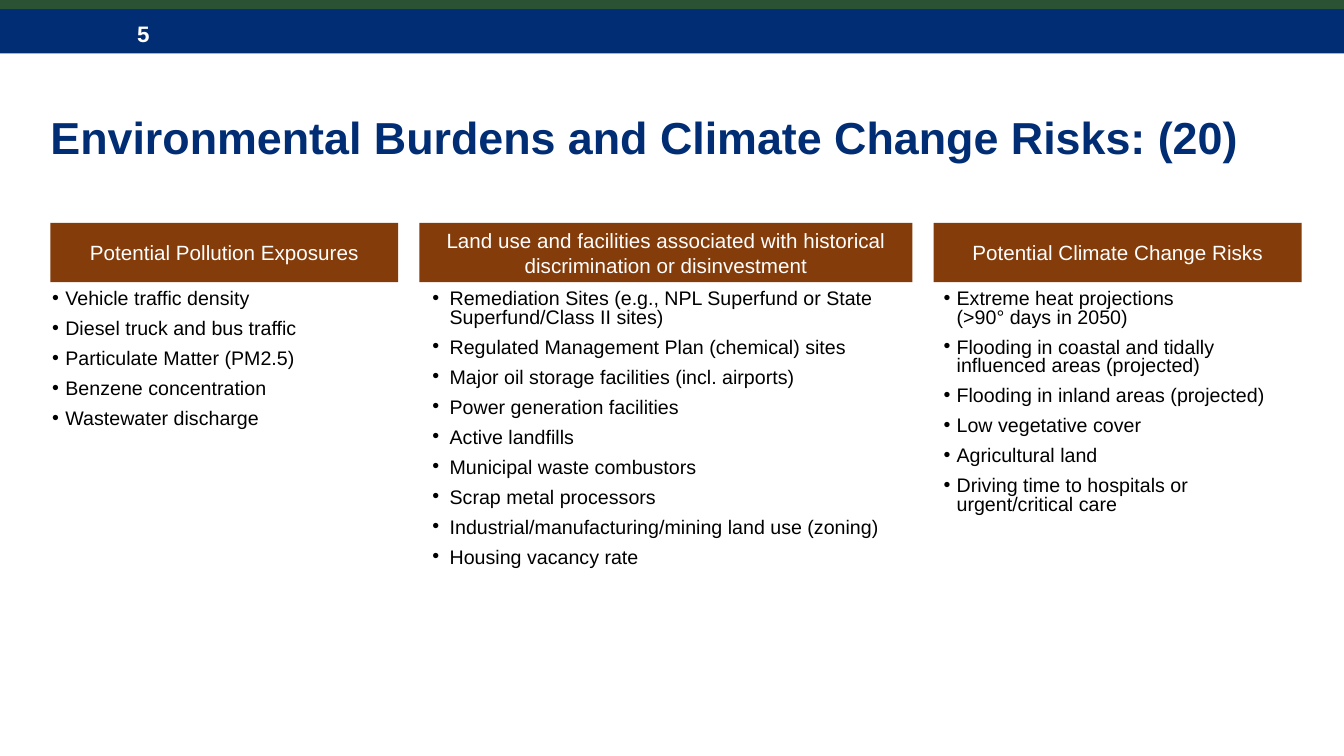
from pptx import Presentation
from pptx.dml.color import RGBColor
from pptx.enum.shapes import MSO_SHAPE as Shape
from pptx.enum.text import MSO_ANCHOR as Anchor, MSO_AUTO_SIZE as Fit, PP_ALIGN as Align
from pptx.oxml.ns import qn
from pptx.oxml.xmlchemy import OxmlElement as Node
from pptx.util import Pt

PX = 9144  # 100 px to the inch
NAVY = RGBColor(0x00, 0x2D, 0x73)
GREEN = RGBColor(0x2C, 0x52, 0x34)
BROWN = RGBColor(0x84, 0x3C, 0x0B)
WHITE = RGBColor(0xFF, 0xFF, 0xFF)
BLACK = RGBColor(0x00, 0x00, 0x00)

WIDE, HIGH = 1333, 750
HEAD = 59  # height of a column heading

# Heading box x and width; list box offset, size; insets; hanging indent
COLUMNS = [
    dict(head="Potential Pollution Exposures", x=50, w=345,
         list=(-8, 62, 363, 239), pad=(10, 5), hang=13,
         items=["Vehicle traffic density",
                "Diesel truck and bus traffic",
                "Particulate Matter (PM2.5)",
                "Benzene concentration",
                "Wastewater discharge"]),
    dict(head="Land use and facilities associated with historical "
              "discrimination or disinvestment", x=416, w=489,
         list=(0, 60, 490, 292), pad=(13, 7), hang=17,
         items=["Remediation Sites (e.g., NPL Superfund or State "
                "Superfund/Class II sites)",
                "Regulated Management Plan (chemical) sites",
                "Major oil storage facilities (incl. airports)",
                "Power generation facilities",
                "Active landfills",
                "Municipal waste combustors",
                "Scrap metal processors",
                "Industrial/manufacturing/mining land use (zoning)",
                "Housing vacancy rate"]),
    dict(head="Potential Climate Change Risks", x=926, w=365,
         list=(0, 62, 365, 356), pad=(10, 5), hang=13,
         items=["Extreme heat projections\v(>90° days in 2050)",
                "Flooding in coastal and tidally influenced areas (projected)",
                "Flooding in inland areas (projected)",
                "Low vegetative cover",
                "Agricultural land",
                "Driving time to hospitals or urgent/critical care"]),
]


def put(item, **values):
    for name, value in values.items():
        setattr(item, name, value)


def px(*sizes):
    return [size * PX for size in sizes]


def inset(frame, left, top, right, low):
    put(frame, margin_left=left * PX, margin_top=top * PX,
        margin_right=right * PX, margin_bottom=low * PX)


def write(para, text, size, color, bold=False):
    """Fill a paragraph, giving line breaks the size of the text."""
    para.text = text
    for run in para.runs:
        put(run.font, name="Arial", size=Pt(size), bold=bold)
        run.font.color.rgb = color
    for gap in para._p.findall(qn("a:br")):
        style = Node("a:rPr")
        style.set("sz", str(size * 100))
        gap.append(style)


def block(slide, box, color):
    rect = slide.shapes.add_shape(Shape.RECTANGLE, *px(*box))
    rect.shadow.inherit = False
    rect.fill.solid()
    rect.fill.fore_color.rgb = color
    rect.line.fill.background()
    put(rect.text_frame, word_wrap=True, vertical_anchor=Anchor.MIDDLE)
    return rect.text_frame


def banner(slide, x, y, w):
    """Green strip over a navy bar with the page number."""
    frame = block(slide, (x, y + 9, w, 44), NAVY)
    inset(frame, 136, 12, 4, 8)
    para = frame.paragraphs[0]
    para.alignment = Align.LEFT
    write(para, "5", 16, WHITE, True)
    block(slide, (x, y, w, 9), GREEN)


def title(slide, x, y, w, h):
    shape = slide.shapes.title
    left, top, width, height = px(x, y, w, h)
    put(shape, left=left, top=top, width=width, height=height)
    frame = shape.text_frame
    put(frame, word_wrap=True, auto_size=Fit.NONE, vertical_anchor=Anchor.MIDDLE)
    inset(frame, 0, 0, 0, 0)
    para = frame.paragraphs[0]
    put(para, alignment=Align.LEFT, line_spacing=0.9)
    write(para, "Environmental Burdens and Climate Change Risks: (20)",
          32, NAVY, True)


def bullet(para, hang):
    props = para._p.get_or_add_pPr()
    props.set("marL", str(hang * PX))
    props.set("indent", str(-hang * PX))
    for tag, key, value in (("a:buFont", "typeface", "Arial"),
                            ("a:buChar", "char", "•")):
        mark = Node(tag)
        mark.set(key, value)
        props.append(mark)


def column(slide, y, data):
    """Brown heading with a bullet list below it."""
    x = data["x"]
    para = block(slide, (x, y, data["w"], HEAD), BROWN).paragraphs[0]
    para.alignment = Align.CENTER
    write(para, data["head"], 14.7, WHITE)

    dx, dy, w, h = data["list"]
    frame = slide.shapes.add_textbox(*px(x + dx, y + dy, w, h)).text_frame
    put(frame, word_wrap=True, auto_size=Fit.SHAPE_TO_FIT_TEXT)
    inset(frame, *data["pad"], *data["pad"])
    for n, text in enumerate(data["items"]):
        para = frame.add_paragraph() if n else frame.paragraphs[0]
        bullet(para, data["hang"])
        put(para, line_spacing=0.8, space_after=Pt(8))
        write(para, text, 14, BLACK)


def main():
    deck = Presentation()
    put(deck, slide_width=WIDE * PX, slide_height=HIGH * PX)
    slide = deck.slides.add_slide(deck.slide_layouts[5])
    banner(slide, 0, 0, WIDE)
    title(slide, 50, 72, 1245, 134)
    for data in COLUMNS:
        column(slide, 221, data)
    deck.save("out.pptx")


if __name__ == "__main__":
    main()
